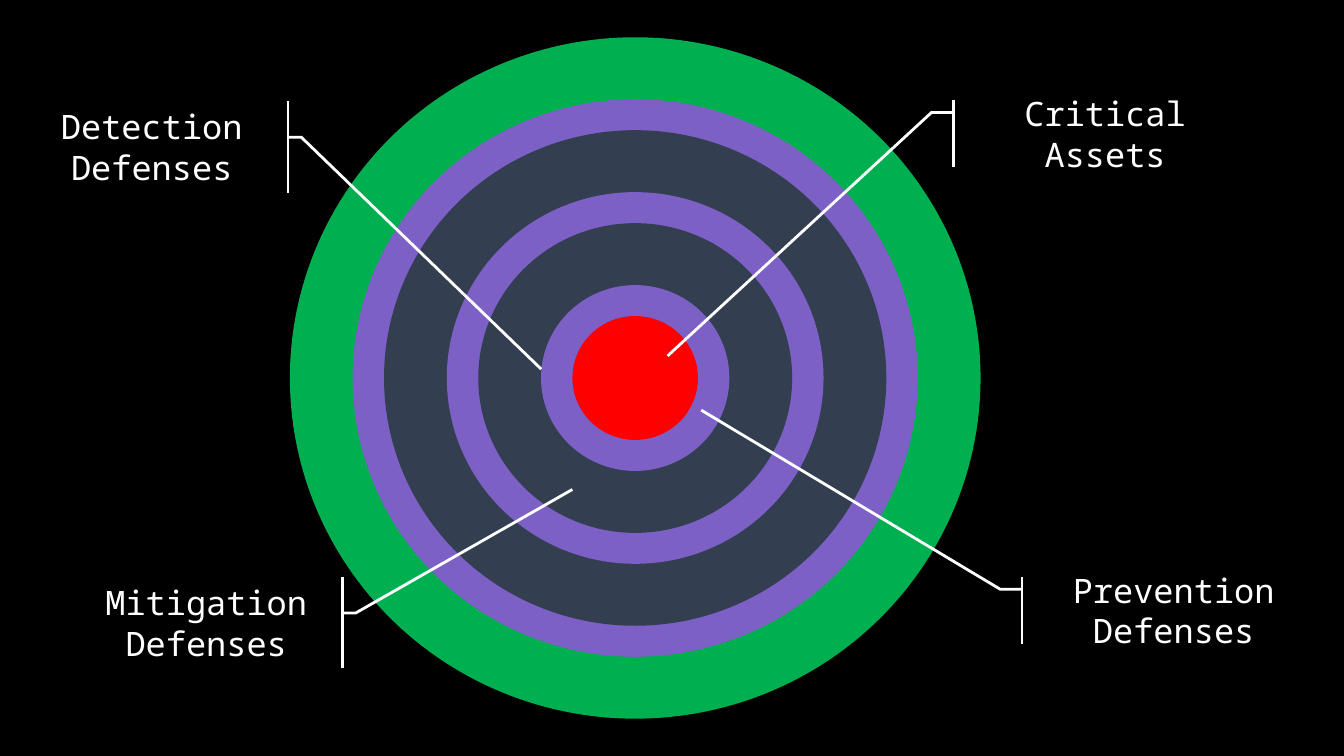
from dataclasses import dataclass

from pptx import Presentation
from pptx.dml.color import RGBColor
from pptx.enum.shapes import MSO_SHAPE as Preset
from pptx.enum.text import MSO_ANCHOR as Anchor, PP_ALIGN as Align
from pptx.shapes.autoshape import Shape
from pptx.slide import Slide
from pptx.util import Inches, Pt

BLACK = RGBColor(0x00, 0x00, 0x00)
WHITE = RGBColor(0xFF, 0xFF, 0xFF)
GREEN = RGBColor(0x00, 0xB0, 0x50)
PURPLE = RGBColor(0x7C, 0x60, 0xC6)
SLATE = RGBColor(0x33, 0x3F, 0x50)
RED = RGBColor(0xFF, 0x00, 0x00)

FONT = "Noto Sans Mono"
CENTER_X, CENTER_Y = 6.3, 3.75
TARGET_WIDTH, TARGET_HEIGHT, TARGET_UNITS = 6.85, 6.76, 11


@dataclass(frozen=True)
class Ring:
    units: int
    color: RGBColor


@dataclass(frozen=True)
class Callout:
    lines: tuple[str, ...]
    left: float
    top: float
    width: float
    height: float
    bar_gap: float
    elbow_gap: float
    elbow_drop: float
    tip_gap: float
    tip_drop: float
    mirrored: bool = False


RINGS = (
    Ring(11, GREEN),
    Ring(9, PURPLE),
    Ring(8, SLATE),
    Ring(6, PURPLE),
    Ring(5, SLATE),
    Ring(3, PURPLE),
    Ring(2, RED),
)

CALLOUTS = (
    Callout(("Critical Assets",), 9.67, 0.99, 2.58, 0.67,
            0.083, 0.167, 0.188, 1.182, 3.793),
    Callout(("Prevention", "Defenses"), 10.35, 5.72, 2.58, 0.67,
            0.083, 0.167, 0.188, 1.316, -2.464),
    Callout(("Mitigation", "Defenses"), 0.9, 5.72, 2.29, 0.91,
            0.09, 0.148, 0.397, 1.086, -0.95, mirrored=True),
    Callout(("Detection", "Defenses"), 0.36, 1, 2.29, 0.91,
            0.09, 0.148, 0.397, 1.187, 2.926, mirrored=True),
)


def write_text(holder: Shape, lines: tuple[str, ...], *, font: str = FONT,
               size: float = 24, color: RGBColor = WHITE,
               align: Align = Align.CENTER) -> None:
    frame = holder.text_frame
    frame.word_wrap = True
    frame.vertical_anchor = Anchor.MIDDLE
    for index, line in enumerate(lines):
        paragraph = frame.add_paragraph() if index else frame.paragraphs[0]
        paragraph.alignment = align
        run = paragraph.add_run()
        run.text = line
        run.font.name = font
        run.font.size = Pt(size)
        run.font.color.rgb = color


def draw_ring(slide: Slide, ring: Ring) -> None:
    width = TARGET_WIDTH * ring.units / TARGET_UNITS
    height = TARGET_HEIGHT * ring.units / TARGET_UNITS
    disc = slide.shapes.add_shape(
        Preset.OVAL, Inches(CENTER_X - width / 2), Inches(CENTER_Y - height / 2),
        Inches(width), Inches(height))
    disc.shadow.inherit = False
    disc.fill.solid()
    disc.fill.fore_color.rgb = ring.color
    disc.line.fill.background()


def draw_callout(slide: Slide, callout: Callout) -> None:
    label = slide.shapes.add_shape(
        Preset.LINE_CALLOUT_2_ACCENT_BAR, Inches(callout.left), Inches(callout.top),
        Inches(callout.width), Inches(callout.height))
    label.shadow.inherit = False
    label.fill.background()
    label.line.color.rgb = WHITE
    label.line.width = Pt(2)
    leader = (callout.elbow_drop, -callout.bar_gap, callout.elbow_drop,
              -callout.elbow_gap, callout.tip_drop, -callout.tip_gap)
    for index, value in enumerate(leader):
        label.adjustments[index] = value
    if callout.mirrored:
        label.element.spPr.xfrm.set("flipH", "1")
    write_text(label, callout.lines)


def main() -> None:
    deck = Presentation()
    deck.slide_width = Inches(13.33)
    deck.slide_height = Inches(7.5)
    slide = deck.slides.add_slide(deck.slide_layouts[6])
    slide.background.fill.solid()
    slide.background.fill.fore_color.rgb = BLACK
    for ring in RINGS:
        draw_ring(slide, ring)
    for callout in CALLOUTS:
        draw_callout(slide, callout)
    deck.save("out.pptx")


if __name__ == "__main__":
    main()
